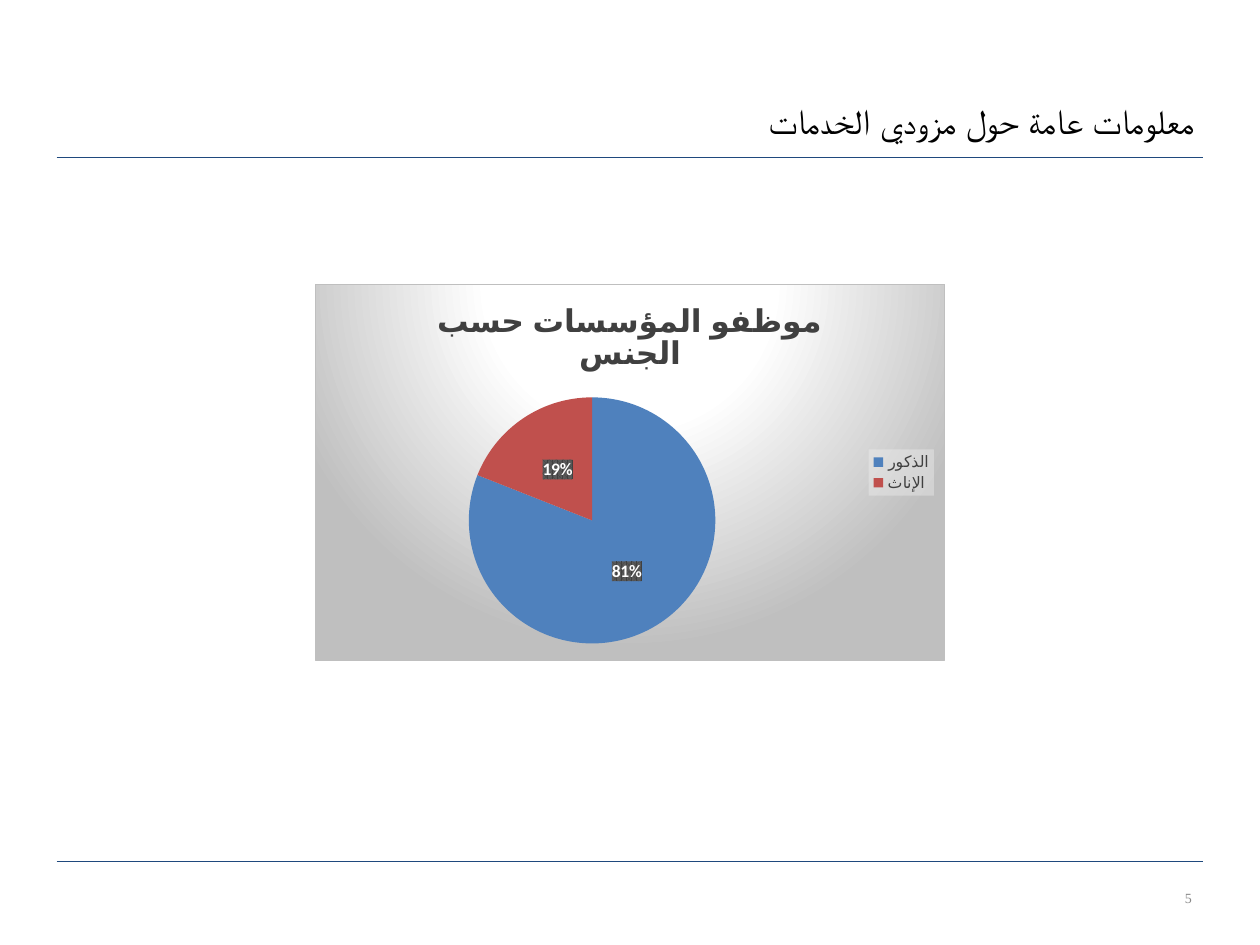
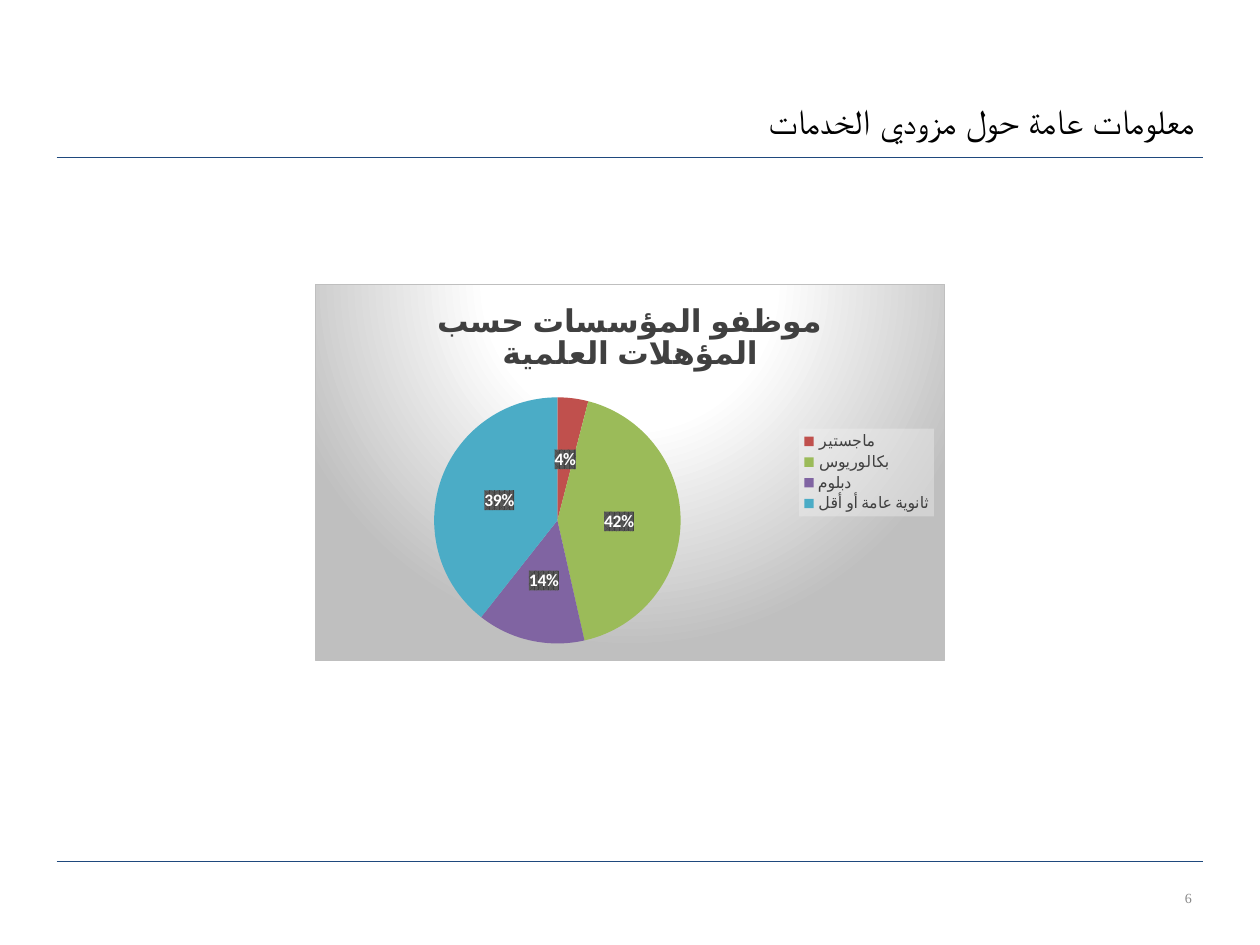
from lxml import etree
from pptx import Presentation
from pptx import util as u
from pptx.chart.data import CategoryChartData
from pptx.dml.color import RGBColor
from pptx.enum import chart as ch, shapes, text
from pptx.oxml import parse_xml
from pptx.oxml.ns import nsdecls, qn

WIDTH, HEIGHT = u.Inches(10), u.Inches(7.5)
MARGIN = 0.045  # share of the slide's width
COLORS = {
    "rule": "1F497D", "title": "000000", "number": "898989",
    "chart_text": "404040", "label": "FFFFFF", "label_dots": "595959",
    "light": "FFFFFF", "edge": "BFBFBF", "legend": "F2F2F2",
}
SLICES = ["4F81BD", "C0504D", "9BBB59", "8064A2", "4BACC6"]
FIRST_NUMBER = 5
TITLE = "معلومات عامة حول مزودي الخدمات"
CHARTS = [
    ("موظفو المؤسسات حسب الجنس", {"الذكور": 81, "الإناث": 19}),
    ("موظفو المؤسسات حسب المؤهلات العلمية",
     {"دكتوراه": 0, "ماجستير": 4, "بكالوريوس": 42, "دبلوم": 14,
      "ثانوية عامة أو أقل": 39}),
]


def rgb(name):
    return RGBColor.from_string(COLORS[name])


def place(x, y, w, h):
    """Turn shares of the slide's size into lengths."""
    return int(WIDTH * x), int(HEIGHT * y), int(WIDTH * w), int(HEIGHT * h)


def set_font(font, name, size, color, bold=False):
    font.name, font.size, font.bold = name, u.Pt(size), bold
    font.color.rgb = rgb(color)


def solid(name, alpha=100):
    return (f'<a:solidFill><a:srgbClr val="{COLORS[name]}">'
            f'<a:alpha val="{alpha * 1000}"/></a:srgbClr></a:solidFill>')


def set_background(element, fill, line="<a:ln><a:noFill/></a:ln>"):
    """Give a chart part its fill and line, just ahead of its text settings."""
    element.find(qn("c:txPr")).addprevious(
        parse_xml(f'<c:spPr {nsdecls("c", "a")}>{fill}{line}</c:spPr>'))


def add_title(s, box):
    sp = s.shapes.title
    sp.left, sp.top, sp.width, sp.height = place(*box)
    tf = sp.text_frame
    tf.text = TITLE
    tf.vertical_anchor = text.MSO_ANCHOR.BOTTOM
    p = tf.paragraphs[0]
    p.alignment = text.PP_ALIGN.RIGHT
    set_font(p.font, "Arial", 20, "title")
    p_pr = p._p.get_or_add_pPr()
    p_pr.set("rtl", "1")
    etree.SubElement(p_pr.find(qn("a:defRPr")), qn("a:cs"), typeface="Arial")


def add_rule(s, y):
    x, y, w, _ = place(MARGIN, y, 1 - 2 * MARGIN, 0)
    line = s.shapes.add_connector(shapes.MSO_CONNECTOR.STRAIGHT, x, y, x + w, y)
    line.line.color.rgb = rgb("rule")
    line.line.width = u.Pt(0.75)
    etree.SubElement(line._element.spPr, qn("a:effectLst"))


def add_number(s, number, box):
    tf = s.shapes.add_textbox(*place(*box)).text_frame
    tf.word_wrap = True
    tf.vertical_anchor = text.MSO_ANCHOR.MIDDLE
    tf.margin_left = tf.margin_right = u.Inches(0.09)
    tf.margin_top = tf.margin_bottom = u.Inches(0.04)
    p = tf.paragraphs[0]
    p.text = str(number)
    p.alignment = text.PP_ALIGN.RIGHT
    set_font(p.font, "Times New Roman", 8, "number")


def add_pie(s, heading, shares, box):
    data = CategoryChartData()
    data.categories = list(shares)
    data.add_series("Series 1", list(shares.values()))
    chart = s.shapes.add_chart(ch.XL_CHART_TYPE.PIE, *place(*box), data).chart
    set_font(chart.font, "Calibri", 10, "title")

    # Circular gradient and border behind the whole chart
    stops = "".join(
        f'<a:gs pos="{pos * 1000}"><a:srgbClr val="{COLORS[name]}"/></a:gs>'
        for pos, name in ((0, "light"), (39, "light"), (100, "edge")))
    set_background(
        chart._chartSpace,
        f'<a:gradFill><a:gsLst>{stops}</a:gsLst><a:path path="circle">'
        '<a:fillToRect l="50000" t="-80000" r="50000" b="180000"/></a:path></a:gradFill>',
        f'<a:ln w="9525">{solid("edge")}</a:ln>')

    # Heading
    chart.has_title = True
    chart.chart_title.include_in_layout = False
    tf = chart.chart_title.text_frame
    tf.text = heading
    set_font(tf.paragraphs[0].font, "Calibri", 18, "chart_text", True)

    # Legend
    chart.has_legend = True
    legend = chart.legend
    legend.position = ch.XL_LEGEND_POSITION.RIGHT
    legend.include_in_layout = False
    set_font(legend.font, "Calibri", 9, "chart_text")
    set_background(legend._element, solid("legend", 39))

    # Slices and their percentages
    plot = chart.plots[0]
    plot.vary_by_categories = True
    series = plot.series[0]
    labels = series.data_labels
    labels.show_percentage, labels.show_value = True, False
    labels.number_format, labels.number_format_is_linked = "0%", False
    labels.position = ch.XL_LABEL_POSITION.CENTER
    set_font(labels.font, "Calibri", 10, "label", True)
    set_background(
        labels._element,
        f'<a:pattFill prst="pct75"><a:fgClr><a:srgbClr val="{COLORS["chart_text"]}"/></a:fgClr>'
        f'<a:bgClr><a:srgbClr val="{COLORS["label_dots"]}"/></a:bgClr></a:pattFill>')
    for i, value in enumerate(shares.values()):
        fill = series.points[i].format.fill
        fill.solid()
        fill.fore_color.rgb = RGBColor.from_string(SLICES[i])
        if value == 0:
            hide_entry(legend._element.find(qn("c:legendPos")).addnext, "legendEntry", i)
            hide_entry(lambda e: labels._element.insert(0, e), "dLbl", i)


def hide_entry(insert, tag, index):
    """Hide the legend entry or label of an empty slice."""
    insert(parse_xml(f'<c:{tag} {nsdecls("c")}><c:idx val="{index}"/>'
                     f'<c:delete val="1"/></c:{tag}>'))


def add_chart_slide(prs, number, heading, shares):
    s = prs.slides.add_slide(prs.slide_layouts[5])
    for y in (0.912, 0.167):
        add_rule(s, y)
    add_number(s, number, (0.864, 0.921, 0.091, 0.059))
    add_title(s, (0.231, 0.039, 0.727, 0.117))
    add_pie(s, heading, shares, (0.25, 0.3, 0.5, 0.4))


def main():
    prs = Presentation()
    prs.slide_width, prs.slide_height = WIDTH, HEIGHT
    for number, (heading, shares) in enumerate(CHARTS, FIRST_NUMBER):
        add_chart_slide(prs, number, heading, shares)
    prs.save("out.pptx")


if __name__ == "__main__":
    main()
